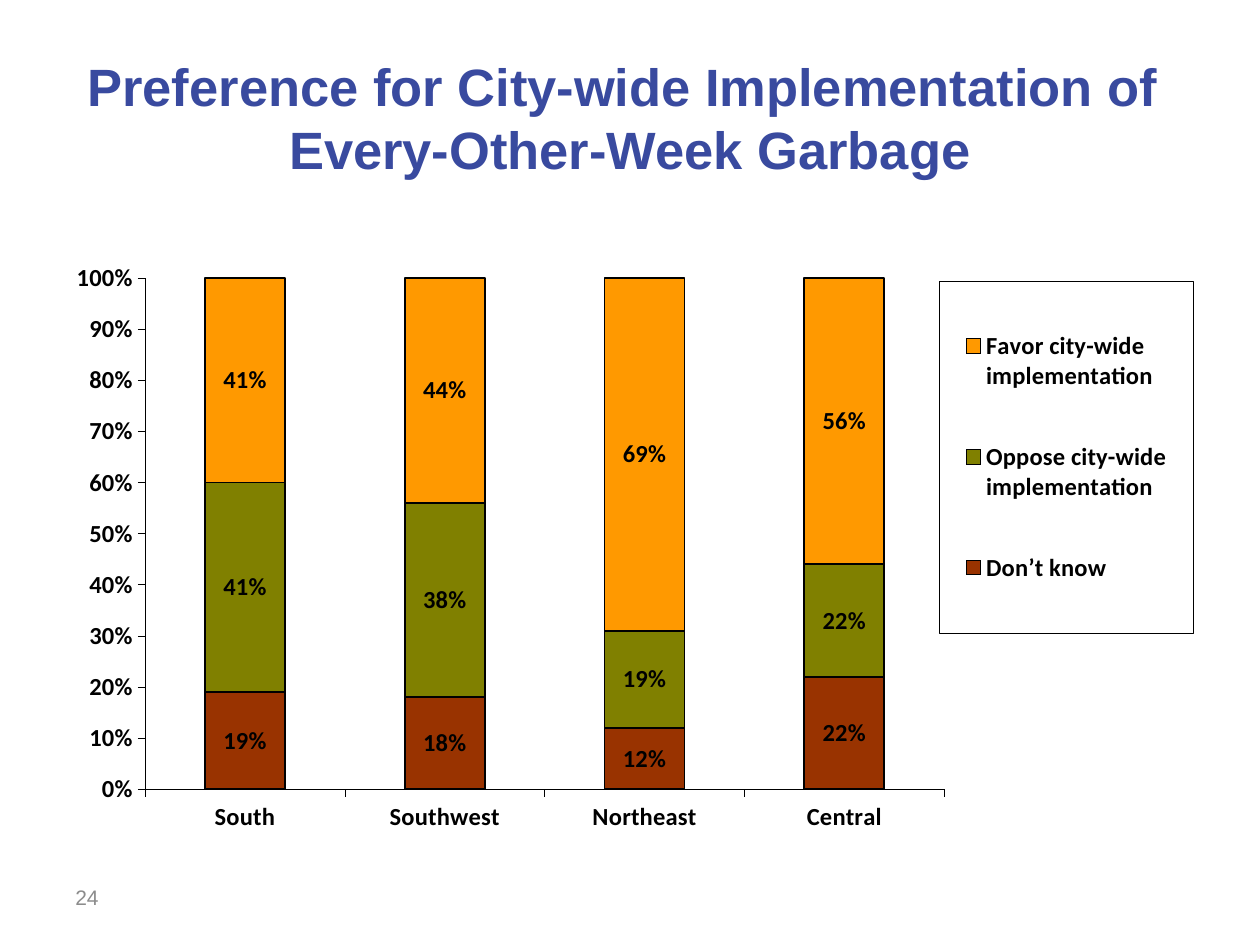
from lxml import etree
from pptx import Presentation
from pptx.chart.data import CategoryChartData
from pptx.dml.color import RGBColor
from pptx.enum import chart as ch, text
from pptx.oxml import parse_xml
from pptx.oxml.ns import nsdecls, qn
from pptx.util import Inches, Pt

BLUE = RGBColor(0x39, 0x4A, 0x9F)
GREY = RGBColor(0x8C, 0x8C, 0x8C)
BLACK = RGBColor(0, 0, 0)
RUST = RGBColor(0x99, 0x33, 0x00)
OLIVE = RGBColor(0x80, 0x80, 0x00)
ORANGE = RGBColor(0xFF, 0x99, 0x00)

REGIONS = ["South", "Southwest", "Northeast", "Central"]
ANSWERS = [
    ("Don’t know", RUST, [0.19, 0.18, 0.12, 0.22]),
    ("Oppose city-wide implementation", OLIVE, [0.41, 0.38, 0.19, 0.22]),
    ("Favor city-wide implementation", ORANGE, [0.41, 0.44, 0.69, 0.56]),
]


def format_font(font, color, **values):
    for name, value in values.items():
        setattr(font, name, value)
    font.color.rgb = color


def place(shape, *lengths):
    for name, length in zip(("left", "top", "width", "height"), lengths):
        setattr(shape, name, Inches(length))


def format_line(line, width):
    line.color.rgb = BLACK
    line.width = Pt(width)


def set_layout(parent, successor_tags, fractions, inner=False):
    """Fix the place of a chart part as fractions of the chart area."""
    for old in parent.findall(qn("c:layout")):
        parent.remove(old)
    layout = parse_xml(f"<c:layout {nsdecls('c')}><c:manualLayout/></c:layout>")
    settings = [("layoutTarget", "inner")] if inner else []
    settings += [("xMode", "edge"), ("yMode", "edge")]
    settings += zip("xywh", fractions)
    for tag, value in settings:
        etree.SubElement(layout[0], qn(f"c:{tag}")).set("val", str(value))
    successor = next(child for child in parent
                     if child.tag in [qn(tag) for tag in successor_tags])
    successor.addprevious(layout)


def add_title(page):
    title = page.shapes.title
    place(title, 0.5, 0.3, 9, 1.25)
    frame = title.text_frame
    frame.text = "Preference for City-wide Implementation of \vEvery-Other-Week Garbage"
    frame.vertical_anchor = text.MSO_ANCHOR.MIDDLE
    para = frame.paragraphs[0]
    para.alignment = text.PP_ALIGN.CENTER
    for span in para.runs:
        format_font(span.font, BLUE, name="Arial", size=Pt(30), bold=True)


def add_page_number(page):
    box = page.shapes.add_textbox(*map(Inches, (0.5, 6.92, 2.33, 0.4)))
    frame = box.text_frame
    frame.word_wrap = True
    frame.vertical_anchor = text.MSO_ANCHOR.MIDDLE
    frame.text = "24"
    format_font(frame.paragraphs[0].runs[0].font, GREY, name="Arial", size=Pt(12))


def format_axes(chart):
    for axis in (chart.category_axis, chart.value_axis):
        axis.has_major_gridlines = False
        axis.major_tick_mark = ch.XL_TICK_MARK.OUTSIDE
        axis.minor_tick_mark = ch.XL_TICK_MARK.NONE
        format_line(axis.format.line, 0.25)
    values = chart.value_axis
    values.minimum_scale, values.maximum_scale, values.major_unit = 0, 1, 0.1
    values.tick_labels.number_format = "0%"
    values.tick_labels.number_format_is_linked = False


def format_series(series, color):
    series.format.fill.solid()
    series.format.fill.fore_color.rgb = color
    format_line(series.format.line, 1)
    labels = series.data_labels
    labels.show_value = True
    labels.number_format = "0%"
    labels.number_format_is_linked = False
    labels.position = ch.XL_LABEL_POSITION.CENTER


def add_legend(chart):
    chart.has_legend = True
    legend = chart.legend
    legend.position = ch.XL_LEGEND_POSITION.RIGHT
    legend.include_in_layout = False
    element = legend._element
    set_layout(element, ["c:overlay"], (0.78, 0.1, 0.22, 0.5))
    element.find(qn("c:overlay")).addnext(parse_xml(
        f'<c:spPr {nsdecls("c", "a")}><a:ln w="3175"><a:solidFill>'
        f'<a:srgbClr val="{BLACK}"/></a:solidFill></a:ln></c:spPr>'))


def add_preference_chart(page):
    data = CategoryChartData(number_format="0%")
    data.categories = REGIONS
    for name, _, shares in ANSWERS:
        data.add_series(name, shares)
    chart = page.shapes.add_chart(
        ch.XL_CHART_TYPE.COLUMN_STACKED,
        *map(Inches, (0.33, 1.67, 9.14, 5.59)), data).chart
    chart.has_title = False
    format_font(chart.font, BLACK, name="Calibri", size=Pt(14), bold=True)
    plot = chart.plots[0]
    plot.vary_by_categories = False
    plot.gap_width, plot.overlap = 150, 100
    for series, (_, color, _) in zip(plot.series, ANSWERS):
        format_series(series, color)
    format_axes(chart)
    add_legend(chart)
    plot_area = chart._chartSpace.chart.plotArea
    set_layout(plot_area, ["c:barChart"], (0.09, 0.096, 0.694, 0.726), inner=True)


def main():
    deck = Presentation()
    deck.slide_width, deck.slide_height = Inches(10), Inches(7.5)
    page = deck.slides.add_slide(deck.slide_layouts[5])
    add_title(page)
    add_page_number(page)
    add_preference_chart(page)
    deck.save("out.pptx")


if __name__ == "__main__":
    main()
